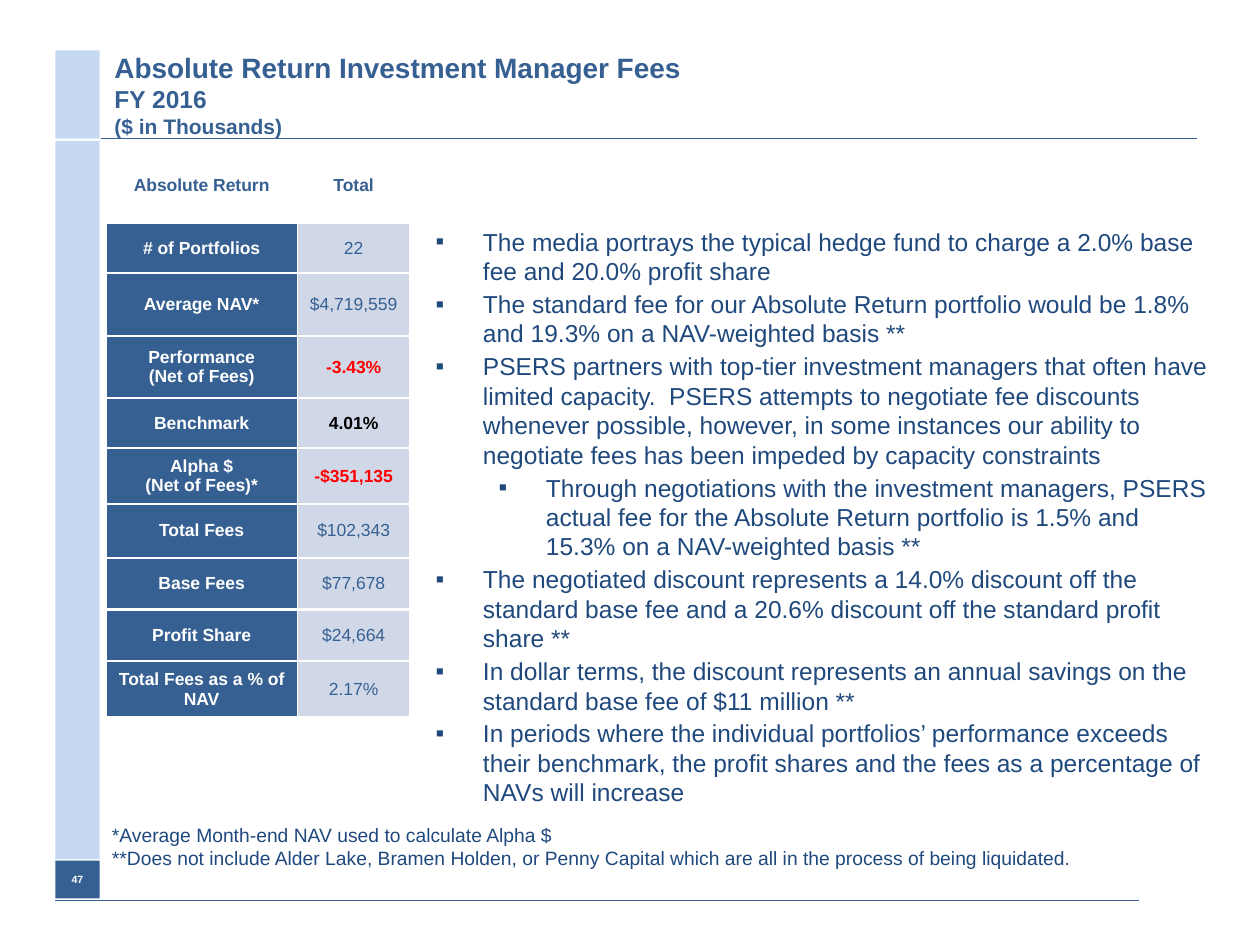
from dataclasses import dataclass

from lxml import etree
from pptx import Presentation
from pptx.dml.color import RGBColor
from pptx.enum.shapes import MSO_CONNECTOR, MSO_SHAPE
from pptx.enum.text import MSO_ANCHOR, PP_ALIGN
from pptx.oxml.ns import qn
from pptx.util import Pt

CENTER, LEFT = PP_ALIGN.CENTER, PP_ALIGN.LEFT
MIDDLE, TOP = MSO_ANCHOR.MIDDLE, MSO_ANCHOR.TOP
RECTANGLE, STRAIGHT = MSO_SHAPE.RECTANGLE, MSO_CONNECTOR.STRAIGHT

FONT = "Arial"
BLUE, CELL_BLUE, NAVY = "376092", "366092", "1F497D"
PALE, CELL_PALE = "C6D9F1", "D0D8E8"
WHITE, RED, BLACK = "FFFFFF", "FF0000", "000000"


@dataclass
class Area:
    left: float
    top: float
    width: float
    height: float

    def lengths(self) -> list:
        return [Pt(value) for value in (self.left, self.top, self.width, self.height)]


@dataclass
class Style:
    size: float
    color: str
    bold: bool = False


@dataclass
class Bullet:
    text: str
    level: int = 0


@dataclass
class FeeRow:
    label: str
    value: str
    height: float
    color: str = CELL_BLUE
    bold: bool = False


FEE_ROWS = [
    FeeRow("Absolute Return", "Total", 43.4, BLUE, True),
    FeeRow("# of Portfolios", "22", 28.6),
    FeeRow("Average NAV*", "$4,719,559", 36),
    FeeRow("Performance\n(Net of Fees)", "-3.43%", 35.3, RED, True),
    FeeRow("Benchmark", "4.01%", 28.6, BLACK, True),
    FeeRow("Alpha $\n(Net of Fees)*", "-$351,135", 32, RED, True),
    FeeRow("Total Fees", "$102,343", 30.8),
    FeeRow("Base Fees", "$77,678", 29.5),
    FeeRow("Profit Share", "$24,664", 29.5),
    FeeRow("Total Fees as a % of NAV", "2.17%", 32.3),
]
COLUMN_WIDTHS = (109.4, 64.4)

BULLETS = [
    Bullet("The media portrays the typical hedge fund to charge a 2.0% base fee "
           "and 20.0% profit share"),
    Bullet("The standard fee for our Absolute Return portfolio would be 1.8% and 19.3% "
           "on a NAV-weighted basis **"),
    Bullet("PSERS partners with top-tier investment managers that often have limited "
           "capacity.  PSERS attempts to negotiate fee discounts whenever possible, "
           "however, in some instances our ability to negotiate fees has been impeded "
           "by capacity constraints"),
    Bullet("Through negotiations with the investment managers, PSERS actual fee for the "
           "Absolute Return portfolio is 1.5% and 15.3% on a NAV-weighted basis **", 1),
    Bullet("The negotiated discount represents a 14.0% discount off the standard base fee "
           "and a 20.6% discount off the standard profit share **"),
    Bullet("In dollar terms, the discount represents an annual savings on the standard "
           "base fee of $11 million **"),
    Bullet("In periods where the individual portfolios’ performance exceeds their "
           "benchmark, the profit shares and the fees as a percentage of NAVs will increase"),
]

FOOTNOTES = [
    "*Average Month-end NAV used to calculate Alpha $",
    "**Does not include Alder Lake, Bramen Holden, or Penny Capital which are all in the "
    "process of being liquidated.",
]


def rgb(color: str) -> RGBColor:
    return RGBColor.from_string(color)


def add_span(para, text: str, style: Style) -> None:
    span = para.add_run()
    span.text = text
    span.font.color.rgb = rgb(style.color)
    formats = {"name": FONT, "size": Pt(style.size), "bold": style.bold}
    for name, value in formats.items():
        setattr(span.font, name, value)


def fill_paragraphs(frame, texts: list[str], style: Style, align=LEFT) -> list:
    for index, text in enumerate(texts):
        para = frame.add_paragraph() if index else frame.paragraphs[0]
        para.alignment = align
        add_span(para, text, style)
    return list(frame.paragraphs)


def add_text_box(page, area: Area, anchor):
    frame = page.shapes.add_textbox(*area.lengths()).text_frame
    formats = {"word_wrap": True, "vertical_anchor": anchor}
    for name, value in formats.items():
        setattr(frame, name, value)
    return frame


def add_block(page, area: Area, color: str):
    block = page.shapes.add_shape(RECTANGLE, *area.lengths())
    block.shadow.inherit = False
    block.fill.solid()
    block.fill.fore_color.rgb = rgb(color)
    block.line.fill.background()
    return block


def add_rule(page, left: float, right: float, top: float, weight: float) -> None:
    rule = page.shapes.add_connector(STRAIGHT, Pt(left), Pt(top), Pt(right), Pt(top))
    rule.line.color.rgb = rgb(BLUE)
    rule.line.width = Pt(weight)
    etree.SubElement(rule._element.spPr, qn("a:effectLst"))


def set_bullet(para, level: int) -> None:
    properties = para._p.get_or_add_pPr()
    properties.set("marL", str(Pt(27 + 36 * level)))
    properties.set("indent", str(Pt(-27)))
    etree.SubElement(properties, qn("a:buFont")).set("typeface", FONT)
    etree.SubElement(properties, qn("a:buChar")).set("char", "▪")
    para.level = level


def set_borders(cell) -> None:
    properties = cell._tc.get_or_add_tcPr()
    for side, weight in {"L": 1, "R": 1, "T": 1.5, "B": 1.5}.items():
        line = etree.SubElement(properties, qn(f"a:ln{side}"), w=str(Pt(weight)))
        fill = etree.SubElement(line, qn("a:solidFill"))
        etree.SubElement(fill, qn("a:srgbClr"), val=WHITE)


def fill_cell(cell, text: str, style: Style, background: str | None) -> None:
    margins = dict.fromkeys(("margin_left", "margin_right", "margin_top", "margin_bottom"), 0)
    for name, value in {**margins, "vertical_anchor": MIDDLE}.items():
        setattr(cell, name, value)
    set_borders(cell)
    if background:
        cell.fill.solid()
        cell.fill.fore_color.rgb = rgb(background)
    else:
        cell.fill.background()
    fill_paragraphs(cell.text_frame, text.split("\n"), style, CENTER)


def add_fee_table(page, left: float, top: float) -> None:
    area = Area(left, top, sum(COLUMN_WIDTHS), sum(row.height for row in FEE_ROWS))
    table = page.shapes.add_table(len(FEE_ROWS), len(COLUMN_WIDTHS), *area.lengths()).table
    for column, width in zip(table.columns, COLUMN_WIDTHS):
        column.width = Pt(width)
    for index, row in enumerate(FEE_ROWS):
        table.rows[index].height = Pt(row.height)
        label_color = WHITE if index else BLUE
        fill_cell(table.cell(index, 0), row.label, Style(10, label_color, True),
                  CELL_BLUE if index else None)
        fill_cell(table.cell(index, 1), row.value, Style(10, row.color, row.bold),
                  CELL_PALE if index else None)


def main() -> None:
    deck = Presentation()
    deck.slide_width, deck.slide_height = Pt(720), Pt(540)
    page = deck.slides.add_slide(deck.slide_layouts[6])

    # Side band and rules
    add_rule(page, 31.7, 651, 514.8, 0.75)
    add_block(page, Area(31.7, 80.6, 25.2, 410.4), PALE)
    add_block(page, Area(31.7, 28.8, 25.2, 50.4), PALE)
    add_rule(page, 57.6, 684, 79.2, 1)

    # Page number
    number = add_block(page, Area(31.7, 491.8, 25.2, 21.6), BLUE).text_frame
    number.margin_left = number.margin_right = 0
    number.vertical_anchor = MIDDLE
    fill_paragraphs(number, ["47"], Style(6, WHITE, True), CENTER)

    # Title
    title = add_text_box(page, Area(58.3, 28.8, 625.7, 50.4), MIDDLE)
    title.margin_top = title.margin_bottom = 0
    para = title.paragraphs[0]
    add_span(para, "Absolute Return Investment Manager Fees", Style(16, BLUE, True))
    for text, size in (("FY 2016", 14), ("($ in Thousands)", 12)):
        para.add_line_break()
        add_span(para, text, Style(size, BLUE, True))

    # Commentary
    comments = add_text_box(page, Area(241.9, 126, 460, 379.4), TOP)
    paras = fill_paragraphs(comments, [item.text for item in BULLETS], Style(14, NAVY))
    for index, (para, item) in enumerate(zip(paras, BULLETS)):
        set_bullet(para, item.level)
        para.space_before = Pt(2 if index else 0)

    # Footnotes
    notes = add_text_box(page, Area(56.9, 469.4, 578.9, 28.8), MIDDLE)
    fill_paragraphs(notes, FOOTNOTES, Style(11, NAVY))

    # Fee table
    add_fee_table(page, 60.5, 84.2)

    deck.save("out.pptx")


if __name__ == "__main__":
    main()
